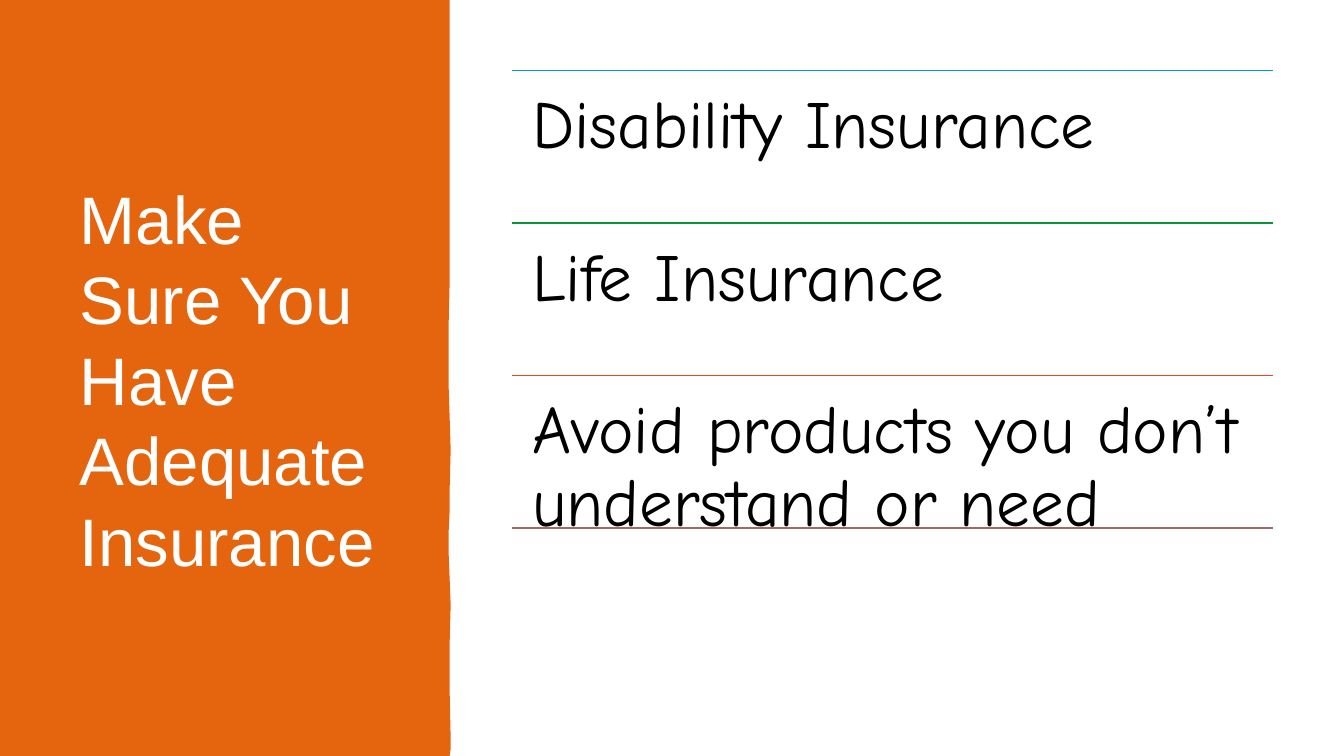
from lxml import etree
from pptx import Presentation
from pptx.dml.color import RGBColor
from pptx.enum.shapes import MSO_CONNECTOR
from pptx.enum.text import MSO_ANCHOR, MSO_AUTO_SIZE, PP_ALIGN
from pptx.oxml.ns import qn
from pptx.util import Inches, Pt

STRAIGHT = MSO_CONNECTOR.STRAIGHT
TOP, MIDDLE = MSO_ANCHOR.TOP, MSO_ANCHOR.MIDDLE
LEFT = PP_ALIGN.LEFT
NO_AUTOFIT = MSO_AUTO_SIZE.NONE

COLORS = {
    "panel": "E4650E", "title": "FFFFFF", "text": "000000",
    "teal": "00A5AB", "green": "09963B", "red": "E64823", "mauve": "9C6A6A",
}
TITLE = "Make Sure You Have Adequate Insurance"
ADVICE = [
    ("Disability Insurance", "teal"),
    ("Life Insurance", "green"),
    ("Avoid products you don’t understand or need", "red"),
]
CLOSING_RULE = "mauve"

SLIDE_WIDTH, SLIDE_HEIGHT = 13.33, 7.5
TITLE_BOX = (0.69, 0.7, 3.39, 6.11)
ROW_LEFT, ROW_WIDTH = 5.08, 7.55
ROWS_TOP, ROWS_BOTTOM = 0.7, 5.24
ROW_HEIGHT = (ROWS_BOTTOM - ROWS_TOP) / len(ADVICE)
ROW_INSET = 0.2

WAVY_EDGE = [
    (4.46, 0), (4.46, 0.63), (4.46, 1.02), (4.46, 1.41), (4.46, 1.74),
    (4.46, 2.33), (4.46, 2.8), (4.45, 3.22), (4.45, 3.83), (4.47, 4.46),
    (4.46, 4.86), (4.46, 5.07), (4.45, 5.28), (4.45, 5.49), (4.47, 6),
    (4.46, 6.39), (4.46, 6.85), (4.47, 7.33), (4.47, 7.43), (4.46, 7.5),
]


def color(name):
    return RGBColor.from_string(COLORS[name])


def set_attributes(target, values):
    for name, value in values.items():
        setattr(target, name, value)


def write_text(shape, text, frame_format, line_spacing, font_name, color_name):
    frame = shape.text_frame
    frame.text = text
    set_attributes(frame, {"word_wrap": True, "auto_size": NO_AUTOFIT, **frame_format})
    paragraph = frame.paragraphs[0]
    set_attributes(paragraph, {"alignment": LEFT, "line_spacing": line_spacing})
    font = paragraph.runs[0].font
    set_attributes(font, {"name": font_name, "size": Pt(48)})
    font.color.rgb = color(color_name)


def add_panel(slide):
    outline = [(Inches(x), Inches(y)) for x, y in WAVY_EDGE + [(0, SLIDE_HEIGHT)]]
    builder = slide.shapes.build_freeform(0, 0)
    builder.add_line_segments(outline, close=True)
    panel = builder.convert_to_shape()
    panel.shadow.inherit = False
    panel.fill.solid()
    panel.fill.fore_color.rgb = color("panel")
    panel.line.fill.background()


def add_title(slide):
    title = slide.shapes.title
    slide.shapes._spTree.append(title._element)
    names = ("left", "top", "width", "height")
    set_attributes(title, dict(zip(names, map(Inches, TITLE_BOX))))
    write_text(title, TITLE, {"vertical_anchor": MIDDLE}, 1.0, "Arial", "title")


def add_rule(shapes, top, color_name):
    rule = shapes.add_connector(STRAIGHT, Inches(ROW_LEFT), Inches(top),
                                Inches(ROW_LEFT + ROW_WIDTH), Inches(top))
    rule.line.color.rgb = color(color_name)
    rule.line.width = Pt(1)
    etree.SubElement(rule._element.spPr, qn("a:effectLst"))


def add_advice(slide):
    shapes = slide.shapes.add_group_shape().shapes
    sides = ("margin_left", "margin_top", "margin_right", "margin_bottom")
    frame_format = {side: Inches(ROW_INSET) for side in sides}
    frame_format["vertical_anchor"] = TOP
    for index, (text, rule_color) in enumerate(ADVICE):
        top = ROWS_TOP + index * ROW_HEIGHT
        add_rule(shapes, top, rule_color)
        box = shapes.add_textbox(Inches(ROW_LEFT), Inches(top),
                                 Inches(ROW_WIDTH), Inches(ROW_HEIGHT))
        write_text(box, text, frame_format, 0.9, "Comic Neue", "text")
    add_rule(shapes, ROWS_BOTTOM, CLOSING_RULE)


def main():
    presentation = Presentation()
    presentation.slide_width = Inches(SLIDE_WIDTH)
    presentation.slide_height = Inches(SLIDE_HEIGHT)
    slide = presentation.slides.add_slide(presentation.slide_layouts[5])
    add_panel(slide)
    add_title(slide)
    add_advice(slide)
    presentation.save("out.pptx")


if __name__ == "__main__":
    main()
